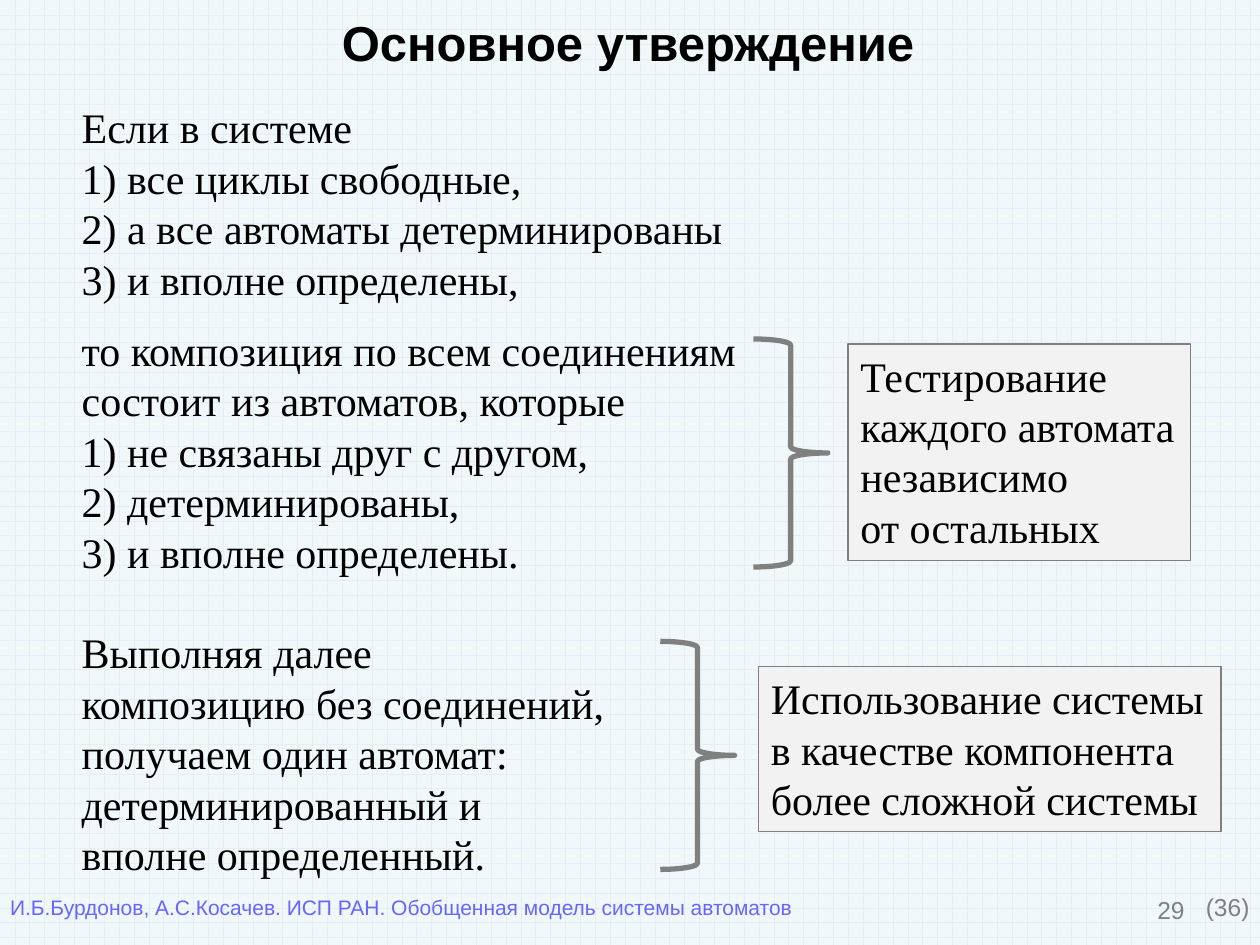
from pptx import Presentation
from pptx.dml.color import RGBColor
from pptx.enum.dml import MSO_PATTERN
from pptx.enum.shapes import MSO_SHAPE
from pptx.enum.text import MSO_ANCHOR, PP_ALIGN
from pptx.util import Inches, Pt

prs = Presentation()
prs.slide_width, prs.slide_height = Inches(10), Inches(7.5)
s = prs.slides.add_slide(prs.slide_layouts[6])

# Grid of 100 columns by 75 rows
COL, ROW = prs.slide_width / 100, prs.slide_height / 75
GRAY = "808080"
LINE = Pt(28.8)


def color(value):
    return RGBColor.from_string(value)


def write(sp, lines, size, font, ink, align=PP_ALIGN.LEFT, inset=(1, 0.5),
          wrap=True, bold=False, spacing=None):
    tf = sp.text_frame
    tf.word_wrap = wrap
    tf.vertical_anchor = MSO_ANCHOR.TOP
    tf.margin_left = tf.margin_right = int(inset[0] * COL)
    tf.margin_top = tf.margin_bottom = int(inset[1] * ROW)
    for i, line in enumerate(lines):
        p = tf.paragraphs[0] if i == 0 else tf.add_paragraph()
        p.text = line
        p.alignment = align
        p.line_spacing = spacing
        p.font.name, p.font.size, p.font.bold = font, Pt(size), bold
        p.font.color.rgb = color(ink)
    return tf


# Background
fill = s.background.fill
fill.patterned()
fill.pattern = MSO_PATTERN.HORIZONTAL_BRICK
fill.fore_color.rgb = color("E7EDF5")
fill.back_color.rgb = color("F1F8F9")

# Footer: page number, page total, credit
footer = [
    ((71.7, 70.5, 23.3, 5.2), "29", 14, GRAY, PP_ALIGN.RIGHT, (1, 0.5), True),
    ((95.7, 70.8, 3.5, 2.3), "(36)", 14, GRAY, PP_ALIGN.LEFT, (0, 0), False),
    ((0.8, 71, 62.7, 2), "И.Б.Бурдонов, А.С.Косачев. ИСП РАН. Обобщенная модель системы автоматов",
     12, "6666FF", PP_ALIGN.LEFT, (0, 0), False),
]
for (c, r, w, h), text, size, ink, align, inset, wrap in footer:
    sp = s.shapes.add_textbox(int(c * COL), int(r * ROW), int(w * COL), int(h * ROW))
    write(sp, [text], size, "Arial", ink, align, inset, wrap)

# Title
sp = s.shapes.add_textbox(int(2 * COL), 0, int(95.7 * COL), int(6.7 * ROW))
tf = write(sp, ["Основное утверждение"], 28, "Arial", "000000",
           PP_ALIGN.CENTER, (1, 1), bold=True)
tf.vertical_anchor = MSO_ANCHOR.MIDDLE

# Statement: condition, consequence, conclusion
condition = ["Если в системе", "1) все циклы свободные,",
             "2) а все автоматы детерминированы", "3) и вполне определены,"]
consequence = ["то композиция по всем соединениям", "состоит из автоматов, которые",
               "1) не связаны друг с другом,", "2) детерминированы,",
               "3) и вполне определены."]
conclusion = ["Выполняя далее", "композицию без соединений,", "получаем один автомат:",
              "детерминированный и", "вполне определенный."]
sp = s.shapes.add_textbox(int(5.5 * COL), int(7.6 * ROW), int(87 * COL), int(63.3 * ROW))
tf = write(sp, condition + consequence + conclusion, 24, "Times New Roman", "000000",
           PP_ALIGN.JUSTIFY, spacing=LINE)
tf.paragraphs[len(condition) - 1].space_after = Pt(12)
tf.paragraphs[len(condition + consequence) - 1].space_after = LINE

# Braces with the remarks they point to
remarks = [
    ((59.8, 26.9), (67.3, 27.3, 27.2, 17.2),
     ["Тестирование", "каждого автомата", "независимо", "от остальных"]),
    ((52.4, 50.9), (60.2, 52.9, 36.7, 13.1),
     ["Использование системы", "в качестве компонента", "более сложной системы"]),
]
for (bc, br), (c, r, w, h), lines in remarks:
    brace = s.shapes.add_shape(MSO_SHAPE.RIGHT_BRACE, int(bc * COL), int(br * ROW),
                               int(5.9 * COL), int(18.1 * ROW))
    brace.fill.background()
    box = s.shapes.add_shape(MSO_SHAPE.RECTANGLE, int(c * COL), int(r * ROW),
                             int(w * COL), int(h * ROW))
    box.fill.solid()
    box.fill.fore_color.rgb = color("F2F2F2")
    for sp, width in ((brace, 3), (box, 0.75)):
        sp.shadow.inherit = False
        sp.line.color.rgb = color(GRAY)
        sp.line.width = Pt(width)
    write(box, lines, 24, "Times New Roman", "000000", wrap=False, spacing=LINE)

prs.save("out.pptx")
